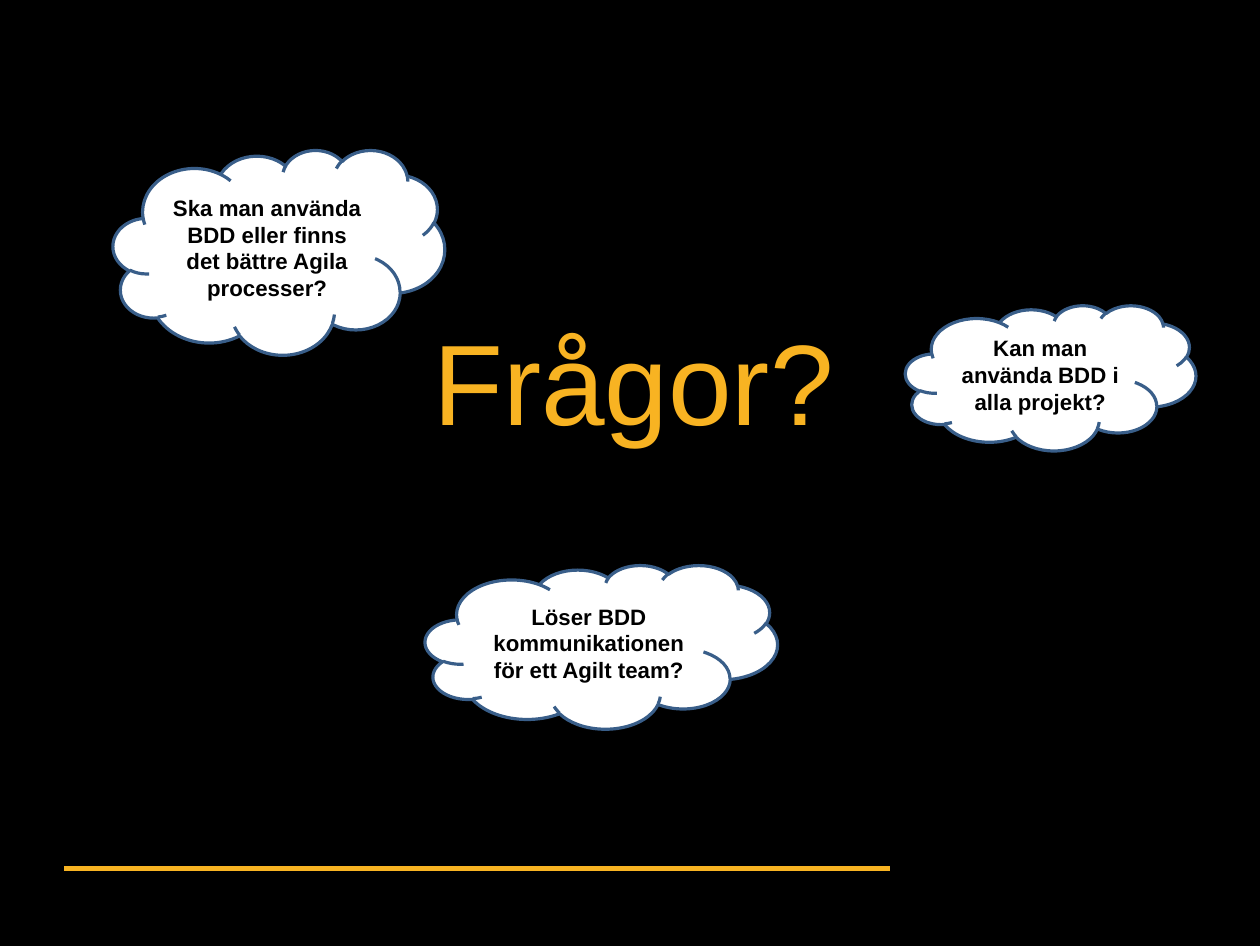
import dataclasses

import pptx
import pptx.dml.color
import pptx.enum.shapes
import pptx.enum.text
import pptx.oxml
import pptx.oxml.ns
import pptx.util

Pt = pptx.util.Pt


@dataclasses.dataclass(frozen=True)
class Theme:
    """Colours, font and type sizes of the slide."""
    background: str = "000000"
    accent: str = "F8B322"
    cloud: str = "FFFFFF"
    outline: str = "395E89"
    ink: str = "000000"
    font: str = "Arial"
    title_size: float = 72
    cloud_size: float = 14


THEME = Theme()

QUESTIONS = [
    ("Ska man använda BDD eller finns det bättre Agila processer?",
     (71.3, 94.3, 208.8, 128.9)),
    ("Löser BDD kommunikationen för ett Agilt team?",
     (267.8, 355.7, 221.8, 103)),
    ("Kan man använda BDD i alla projekt?",
     (570.2, 192.2, 182.9, 91.4)),
]


def rgb(value):
    """Return the colour for a hex string."""
    return pptx.dml.color.RGBColor.from_string(value)


def write_text(tf, text, size, color, bold=False, margins=(0, 0),
               anchor=pptx.enum.text.MSO_ANCHOR.TOP):
    """Write one centred paragraph into a text frame."""
    tf.word_wrap = True
    tf.vertical_anchor = anchor
    tf.margin_left = tf.margin_right = Pt(margins[0])
    tf.margin_top = tf.margin_bottom = Pt(margins[1])
    p = tf.paragraphs[0]
    p.alignment = pptx.enum.text.PP_ALIGN.CENTER
    r = p.add_run()
    r.text = text
    r.font.name = THEME.font
    r.font.size = Pt(size)
    r.font.bold = bold
    r.font.color.rgb = rgb(color)


def add_rule(s, box):
    """Draw the accent line along the top of the box."""
    x, y, w, h = box
    line = s.shapes.add_connector(
        pptx.enum.shapes.MSO_CONNECTOR.STRAIGHT,
        Pt(x + w), Pt(y), Pt(x), Pt(y))
    line.line.color.rgb = rgb(THEME.accent)
    line.line.width = Pt(2.89)
    sp_pr = line._element.spPr
    sp_pr.append(pptx.oxml.parse_xml(
        "<a:effectLst %s/>" % pptx.oxml.ns.nsdecls("a")))


def add_title(s, box, text):
    """Place the large heading in the box."""
    sp = s.shapes.add_textbox(*map(Pt, box))
    write_text(sp.text_frame, text, THEME.title_size, THEME.accent)


def add_cloud(s, box, text):
    """Place a cloud with a question in the box."""
    sp = s.shapes.add_shape(
        pptx.enum.shapes.MSO_SHAPE.CLOUD, *map(Pt, box))
    sp.shadow.inherit = False
    sp.fill.solid()
    sp.fill.fore_color.rgb = rgb(THEME.cloud)
    sp.line.color.rgb = rgb(THEME.outline)
    sp.line.width = Pt(2)
    write_text(sp.text_frame, text, THEME.cloud_size, THEME.ink, bold=True,
               margins=(7.2, 3.6), anchor=pptx.enum.text.MSO_ANCHOR.MIDDLE)


def main():
    """Build the questions slide and save it."""
    prs = pptx.Presentation()
    prs.slide_width, prs.slide_height = Pt(793.44), Pt(595.44)
    s = prs.slides.add_slide(prs.slide_layouts[6])
    s.background.fill.solid()
    s.background.fill.fore_color.rgb = rgb(THEME.background)
    add_rule(s, (40.3, 546.5, 519.9, 0))
    add_title(s, (42, 195.6, 714, 83), "Frågor?")
    for text, box in QUESTIONS:
        add_cloud(s, box, text)
    prs.save("out.pptx")


if __name__ == "__main__":
    main()
